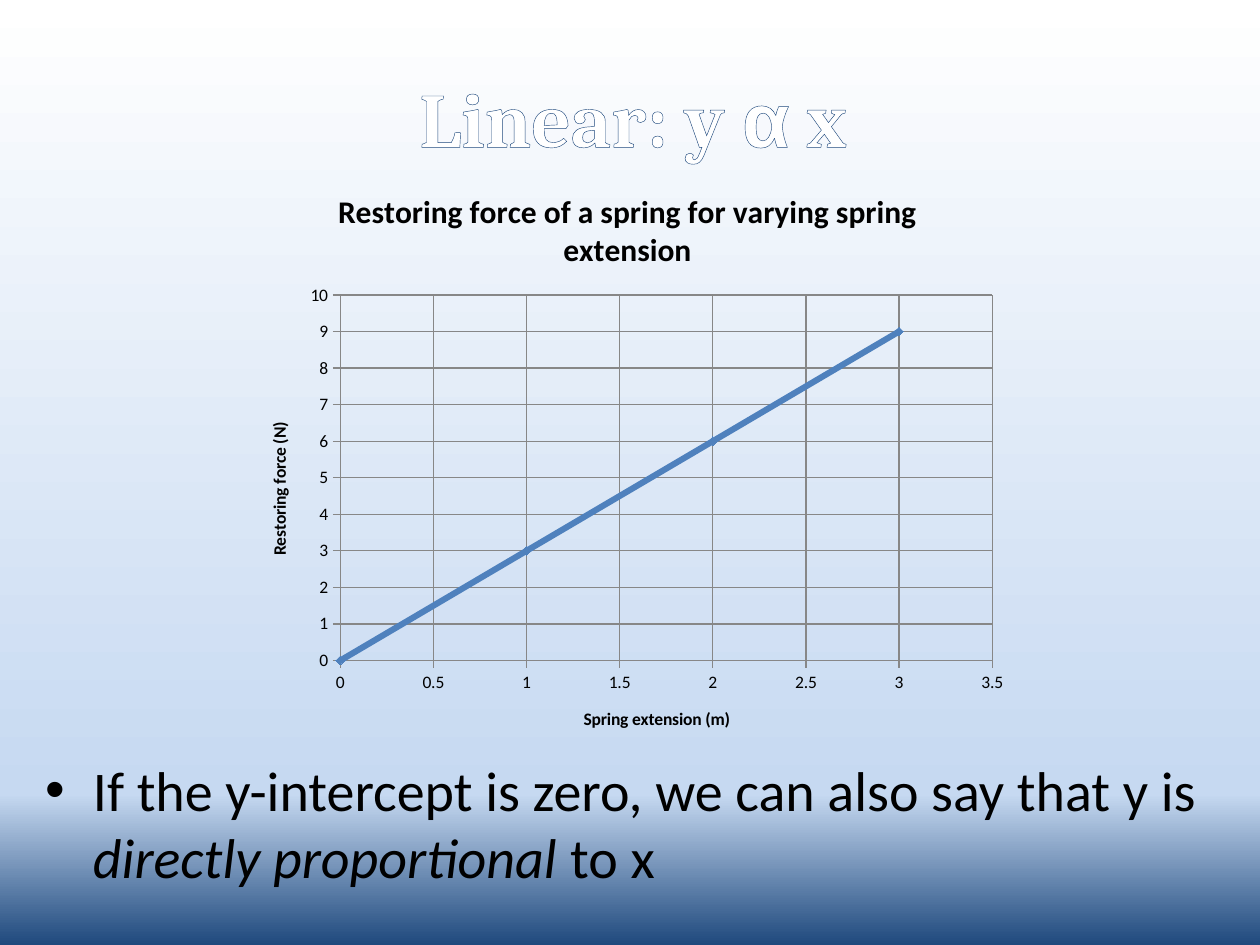
"""Build the slide on direct proportionality with its spring force chart."""
from lxml import etree
from pptx import Presentation
from pptx.chart.data import XyChartData
from pptx.dml.color import RGBColor
from pptx.enum.chart import XL_CHART_TYPE, XL_MARKER_STYLE, XL_TICK_MARK
from pptx.enum.text import MSO_ANCHOR, PP_ALIGN
from pptx.oxml import parse_xml
from pptx.oxml.ns import nsdecls, qn
from pptx.util import Inches, Pt

SCATTER = XL_CHART_TYPE.XY_SCATTER_LINES
DIAMOND = XL_MARKER_STYLE.DIAMOND
OUTSIDE = XL_TICK_MARK.OUTSIDE
MIDDLE, BOTTOM = MSO_ANCHOR.MIDDLE, MSO_ANCHOR.BOTTOM
CENTER = PP_ALIGN.CENTER

COLORS = {"navy": "1F497D", "sky": "C6D9F1", "white": "FFFFFF",
          "black": "000000", "line": "4F81BD", "grid": "878787"}
RGB = {name: RGBColor.from_string(value) for name, value in COLORS.items()}


def style(font, size, color="black", name="Calibri", bold=False):
    """Set the look of a font."""
    font.size, font.name, font.bold = Pt(size), name, bold
    font.color.rgb = RGB[color]


prs = Presentation()
prs.slide_width, prs.slide_height = Inches(10), Inches(7.5)
W, H = prs.slide_width, prs.slide_height
LEFT, WIDTH = int(W * 0.026), int(W * 0.953)
s = prs.slides.add_slide(prs.slide_layouts[5])

fill = s.background.fill
fill.gradient()
fill.gradient_angle = 90
stops = next(s.element.iter(qn("a:gsLst")))
for stop in list(stops):
    stops.remove(stop)
for share, color in ((0, "navy"), (16, "sky"), (100, "white")):
    stops.append(parse_xml(
        f'<a:gs {nsdecls("a")} pos="{share * 1000}">'
        f'<a:srgbClr val="{COLORS[color]}"/></a:gs>'))

title = s.shapes.title
title.left, title.top, title.width, title.height = LEFT, int(H * 0.04), WIDTH, int(H / 6)
tf = title.text_frame
tf.vertical_anchor = MIDDLE
p = tf.paragraphs[0]
p.alignment = CENTER
for text, name in (("Linear: y ", "Cambria"), ("α", "Arial"), (" x", "Cambria")):
    r = p.add_run()
    r.text = text
    style(r.font, 44, "white", name, True)
    r.font.element.insert(0, parse_xml(
        f'<a:ln {nsdecls("a")} w="{Pt(2.48)}"><a:solidFill>'
        f'<a:srgbClr val="{COLORS["navy"]}"/></a:solidFill></a:ln>')) if hasattr(
        r.font, "element") else r._r.get_or_add_rPr().insert(0, parse_xml(
            f'<a:ln {nsdecls("a")} w="{Pt(2.48)}"><a:solidFill>'
            f'<a:srgbClr val="{COLORS["navy"]}"/></a:solidFill></a:ln>'))

body = s.shapes.add_textbox(LEFT, int(H * 0.207), WIDTH, int(H * 0.761))
tf = body.text_frame
tf.word_wrap = True
tf.vertical_anchor = BOTTOM
tf.margin_bottom = Inches(0.2)
p = tf.paragraphs[0]
for text, italic in (("If the y-intercept is zero, we can also say that y is ", False),
                     ("directly proportional", True), (" to x", False)):
    r = p.add_run()
    r.text = text
    style(r.font, 32)
    r.font.italic = italic
pPr = p._p.get_or_add_pPr()
pPr.set("marL", str(Inches(0.38)))
pPr.set("indent", str(-Inches(0.38)))
etree.SubElement(pPr, qn("a:buFont"), typeface="Arial")
etree.SubElement(pPr, qn("a:buChar"), char="•")

data = XyChartData()
series = data.add_series("Series 1")
for extension in range(4):
    series.add_data_point(extension, 3 * extension)
chart = s.shapes.add_chart(SCATTER, int(W * 0.19), int(H * 0.175),
                           int(W * 0.616), int(H * 0.624), data).chart
style(chart.font, 10)
chart.has_legend = False
chart.has_title = True
axes = ((chart.category_axis, "Spring extension (m)", 3.5, 0.5),
        (chart.value_axis, "Restoring force (N)", 10, 1))
for axis, text, top, step in axes:
    axis.minimum_scale, axis.maximum_scale, axis.major_unit = 0, top, step
    axis.major_tick_mark = OUTSIDE
    axis.has_major_gridlines = axis.has_title = True
    axis.tick_labels.number_format = "General"
    axis.tick_labels.number_format_is_linked = False
    for line in (axis.format.line, axis.major_gridlines.format.line):
        line.color.rgb, line.width = RGB["grid"], Pt(0.75)
titles = [(axis.axis_title, text, 10) for axis, text, top, step in axes]
titles.append((chart.chart_title,
               "Restoring force of a spring for varying spring extension", 18))
for heading, text, size in titles:
    heading.text_frame.text = text
    style(heading.text_frame.paragraphs[0].runs[0].font, size, bold=True)

plot = chart.plots[0]
plot.vary_by_categories = False
force = plot.series[0]
force.smooth = False
force.format.line.color.rgb, force.format.line.width = RGB["line"], Pt(3.5)
force.marker.style, force.marker.size = DIAMOND, 5
force.marker.format.fill.solid()
force.marker.format.fill.fore_color.rgb = RGB["line"]
force.marker.format.line.color.rgb = RGB["line"]

area = next(chart.element.iter(qn("c:plotArea"))) if hasattr(
    chart, "element") else chart._chartSpace.chart.plotArea
for old in area.findall(qn("c:layout")):
    area.remove(old)
layout = etree.Element(qn("c:layout"))
manual = etree.SubElement(layout, qn("c:manualLayout"))
for tag, value in (("layoutTarget", "inner"), ("xMode", "edge"), ("yMode", "edge"),
                   ("x", 0.13), ("y", 0.22), ("w", 0.84), ("h", 0.62)):
    etree.SubElement(manual, qn(f"c:{tag}"), val=str(value))
area.insert(0, layout)

prs.save("out.pptx")
